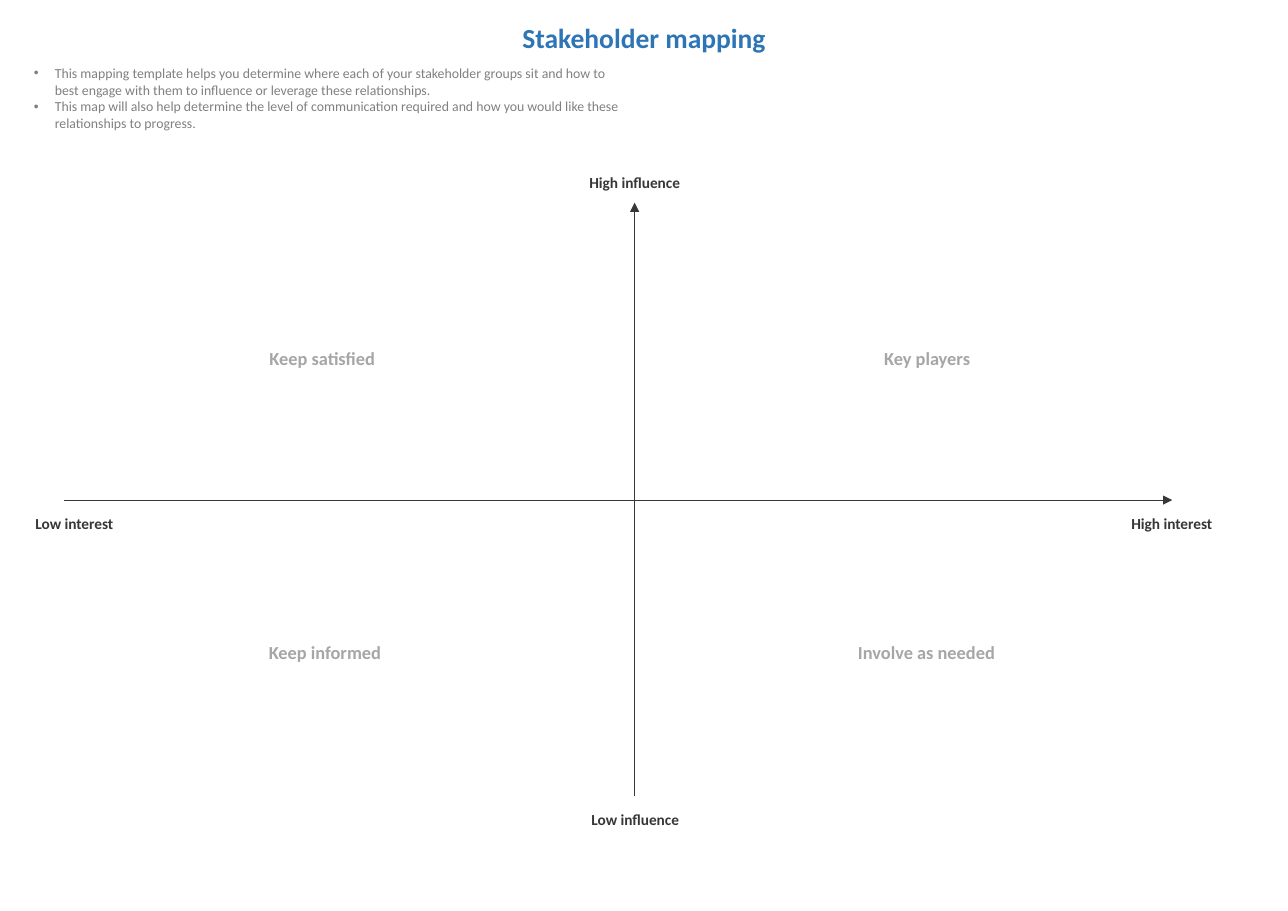
"""Build a stakeholder mapping slide with influence and interest axes."""
from dataclasses import dataclass

from lxml import etree
from pptx import Presentation
from pptx.dml.color import RGBColor
from pptx.enum.shapes import MSO_CONNECTOR
from pptx.enum.text import MSO_AUTO_SIZE, PP_ALIGN
from pptx.oxml.ns import qn
from pptx.slide import Slide
from pptx.text.text import TextFrame
from pptx.util import Inches, Pt

STRAIGHT = MSO_CONNECTOR.STRAIGHT
CENTER = PP_ALIGN.CENTER
LEFT = PP_ALIGN.LEFT
FIT_SHAPE = MSO_AUTO_SIZE.SHAPE_TO_FIT_TEXT
NO_FIT = MSO_AUTO_SIZE.NONE

COLORS = {"title": "2E75B6", "intro": "808080", "axis": "373737", "quadrant": "A6A6A6"}
SIZES = {"title": 18, "intro": 9, "axis": 10, "quadrant": 12}
PAGE_WIDTH, PAGE_HEIGHT = 11.69, 8.27
BULLET_INDENT = 0.19
COLUMN_GAP = 0.31


@dataclass(frozen=True)
class TextItem:
    role: str
    lines: tuple[str, ...]
    left: float
    top: float
    width: float
    height: float
    wrap: bool = False


@dataclass(frozen=True)
class Axis:
    start: tuple[float, float]
    end: tuple[float, float]


INTRO = TextItem(
    "intro",
    (
        "This mapping template helps you determine where each of your stakeholder groups sit "
        "and how to best engage with them to influence or leverage these relationships.",
        "This map will also help determine the level of communication required and how you "
        "would like these relationships to progress.",
    ),
    0.21, 0.54, 11.17, 0.83, True,
)
TITLE = TextItem("title", ("Stakeholder mapping",), 0, 0.12, PAGE_WIDTH, 0.43, True)
AXES = (Axis((0.58, 4.54), (10.64, 4.54)), Axis((5.76, 7.23), (5.76, 1.84)))
LABELS = (
    TextItem("axis", ("High influence",), 5.24, 1.52, 1.04, 0.27),
    TextItem("axis", ("Low influence",), 5.26, 7.31, 1.01, 0.27),
    TextItem("axis", ("Low interest",), 0.21, 4.62, 0.93, 0.27),
    TextItem("axis", ("High interest",), 10.16, 4.62, 0.95, 0.27),
    TextItem("quadrant", ("Keep satisfied",), 2.34, 3.1, 1.17, 0.3),
    TextItem("quadrant", ("Key players",), 7.92, 3.1, 0.99, 0.3),
    TextItem("quadrant", ("Keep informed",), 2.33, 5.77, 1.24, 0.3),
    TextItem("quadrant", ("Involve as needed",), 7.68, 5.77, 1.46, 0.3),
)


def add_text(page: Slide, item: TextItem) -> TextFrame:
    """Add a text box in the style of its role and return its text frame."""
    box = page.shapes.add_textbox(
        Inches(item.left), Inches(item.top), Inches(item.width), Inches(item.height)
    )
    frame = box.text_frame
    is_intro = item.role == "intro"
    frame.word_wrap = item.wrap
    frame.auto_size = NO_FIT if is_intro else FIT_SHAPE
    font_format = {"name": "Calibri", "size": Pt(SIZES[item.role]), "bold": not is_intro}
    for index, line in enumerate(item.lines):
        para = frame.add_paragraph() if index else frame.paragraphs[0]
        para.alignment = LEFT if is_intro else CENTER
        span = para.add_run()
        span.text = line
        for name, value in font_format.items():
            setattr(span.font, name, value)
        span.font.color.rgb = RGBColor.from_string(COLORS[item.role])
    return frame


def add_title(page: Slide) -> None:
    """Add the page title with its paragraph spacing."""
    para = add_text(page, TITLE).paragraphs[0]
    for name, value in {"line_spacing": 1.07, "space_after": Pt(8)}.items():
        setattr(para, name, value)


def add_intro(page: Slide) -> None:
    """Add the bulleted introduction in a two-column box."""
    frame = add_text(page, INTRO)
    body = frame._txBody.bodyPr
    body.set("numCol", "2")
    body.set("spcCol", str(Inches(COLUMN_GAP)))
    for para in frame.paragraphs:
        properties = para._p.get_or_add_pPr()
        properties.set("marL", str(Inches(BULLET_INDENT)))
        properties.set("indent", str(-Inches(BULLET_INDENT)))
        etree.SubElement(properties, qn("a:buFont"), typeface="Arial")
        etree.SubElement(properties, qn("a:buChar"), char="•")


def add_axis(page: Slide, axis: Axis) -> None:
    """Add an axis line with an arrowhead at its end."""
    points = (Inches(length) for length in axis.start + axis.end)
    connector = page.shapes.add_connector(STRAIGHT, *points)
    connector.line.width = Pt(0.5)
    connector.line.color.rgb = RGBColor.from_string(COLORS["axis"])
    etree.SubElement(connector.line._get_or_add_ln(), qn("a:tailEnd"), type="triangle")
    etree.SubElement(connector._element.spPr, qn("a:effectLst"))


def main() -> None:
    """Build and save the deck."""
    deck = Presentation()
    deck.slide_width, deck.slide_height = Inches(PAGE_WIDTH), Inches(PAGE_HEIGHT)
    page = deck.slides.add_slide(deck.slide_layouts[6])
    add_intro(page)
    add_title(page)
    for axis in AXES:
        add_axis(page, axis)
    for label in LABELS:
        add_text(page, label)
    deck.save("out.pptx")


if __name__ == "__main__":
    main()
